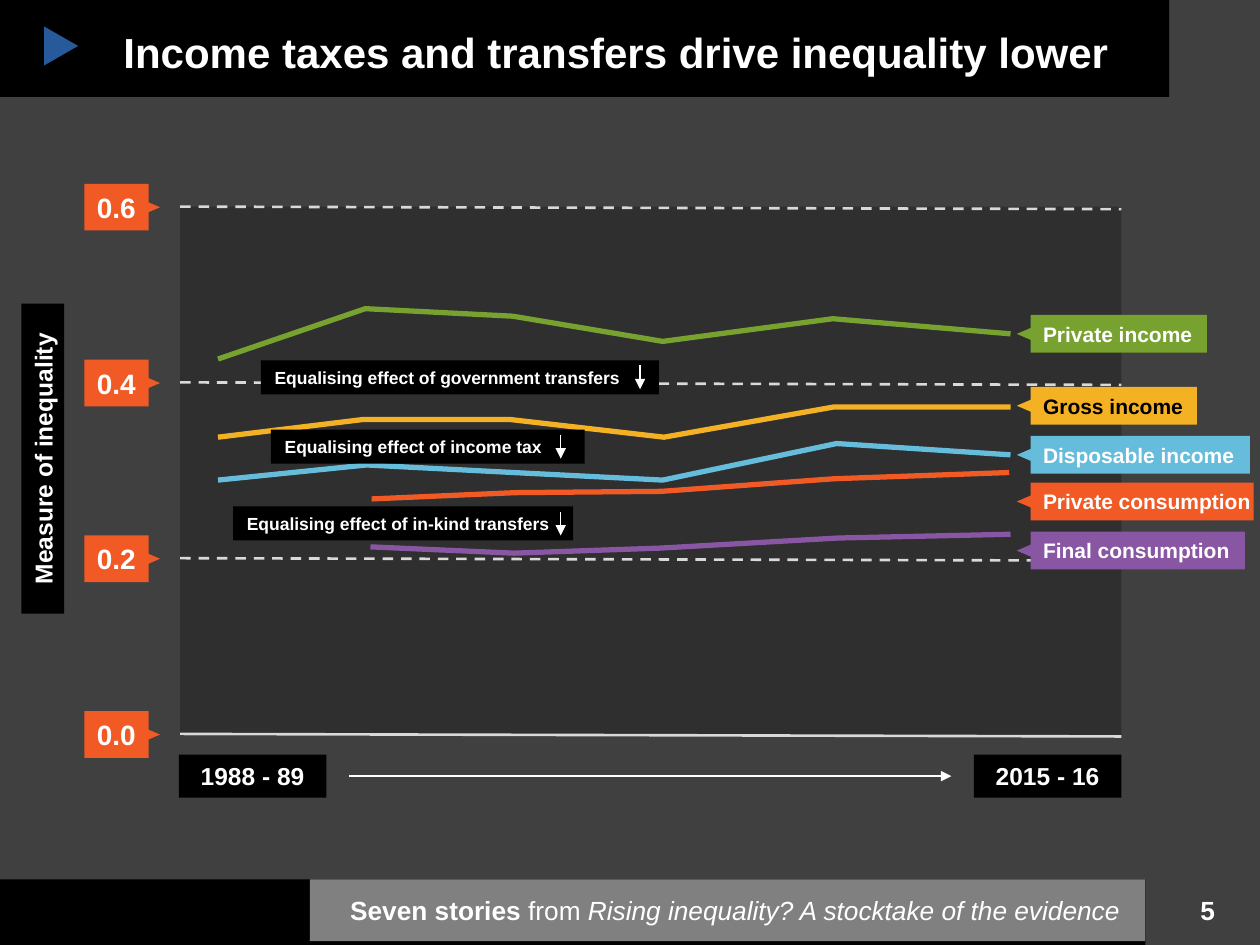
from dataclasses import dataclass

from lxml.etree import SubElement
from pptx import Presentation
from pptx.dml.color import RGBColor
from pptx.enum.dml import MSO_LINE_DASH_STYLE as Dash
from pptx.enum.shapes import MSO_CONNECTOR as Conn, MSO_SHAPE as Shape
from pptx.enum.text import MSO_ANCHOR as Anchor, PP_ALIGN as Align
from pptx.oxml.ns import qn
from pptx.util import Inches, Pt

COLORS = {
    "bg": "404040", "black": "000000", "white": "FFFFFF", "grid": "D9D9D9",
    "footer": "808080", "marker": "265A9A", "orange": "F15A25",
    "green": "78A22F", "yellow": "F4B123", "blue": "66BCDB", "purple": "8956A3",
}


@dataclass
class Box:
    x: float
    y: float
    w: float
    h: float


@dataclass
class Series:
    name: str
    color: str
    points: list[tuple[float, float]]
    tag_y: float
    tag_w: float
    text_color: str = "white"


@dataclass
class Note:
    text: str
    box: Box
    arrow_x: float


SERIES = [
    Series("Private income", "green",
           [(1.73, 2.85), (2.9, 2.45), (4.07, 2.51), (5.26, 2.71), (6.61, 2.53), (8.02, 2.65)],
           2.5, 1.4),
    Series("Gross income", "yellow",
           [(1.73, 3.47), (2.88, 3.33), (4.05, 3.33), (5.27, 3.47), (6.62, 3.23), (8.02, 3.23)],
           3.07, 1.32, "black"),
    Series("Disposable income", "blue",
           [(1.73, 3.81), (2.91, 3.69), (4.07, 3.75), (5.26, 3.81), (6.64, 3.52), (8.02, 3.61)],
           3.46, 1.74),
    Series("Private consumption", "orange",
           [(2.95, 3.96), (4.09, 3.91), (5.25, 3.9), (6.62, 3.8), (8.01, 3.75)],
           3.83, 1.77),
    Series("Final consumption", "purple",
           [(2.94, 4.34), (4.08, 4.39), (5.24, 4.35), (6.65, 4.27), (8.02, 4.24)],
           4.22, 1.7),
]
NOTES = [
    Note("Equalising effect of government transfers", Box(2.07, 2.86, 3.16, 0.27), 5.08),
    Note("Equalising effect of income tax", Box(2.15, 3.41, 2.49, 0.27), 4.45),
    Note("Equalising effect of in-kind transfers", Box(1.85, 4.02, 2.7, 0.27), 4.45),
]
TICKS = ["0.6", "0.4", "0.2", "0.0"]
PLOT = Box(1.43, 1.64, 7.47, 4.2)
TICK_STEP = 1.395


def rgb(name: str) -> RGBColor:
    return RGBColor.from_string(COLORS[name])


def add_run(p, text: str, size: float, color: str = "white", **extra) -> None:
    r = p.add_run()
    r.text = text
    for key, value in {"name": "Arial", "size": Pt(size), "bold": True, **extra}.items():
        setattr(r.font, key, value)
    r.font.color.rgb = rgb(color)


def format_text(sp, align=Align.CENTER, left: float = 0.1, right: float = 0.1):
    tf = sp.text_frame
    settings = {
        "word_wrap": True, "vertical_anchor": Anchor.MIDDLE,
        "margin_left": Inches(left), "margin_right": Inches(right),
        "margin_top": 0, "margin_bottom": 0,
    }
    for key, value in settings.items():
        setattr(tf, key, value)
    p = tf.paragraphs[0]
    p.alignment = align
    return p


def add_shape(shapes, box: Box, color: str, kind=Shape.RECTANGLE, rotation: float = 0):
    sp = shapes.add_shape(kind, *map(Inches, (box.x, box.y, box.w, box.h)))
    sp.shadow.inherit = False
    sp.fill.solid()
    sp.fill.fore_color.rgb = rgb(color)
    sp.line.fill.background()
    sp.rotation = rotation
    return sp


def add_tag(shapes, text: str, box: Box, color: str, size: float,
            text_color: str = "white", points_right: bool = False) -> None:
    group = shapes.add_group_shape().shapes
    sp = add_shape(group, box, color)
    add_run(format_text(sp, Align.LEFT, right=0), text, size, text_color)
    center_x = box.x + box.w + 0.02 if points_right else box.x - 0.04
    pointer = Box(center_x - 0.06, box.y + box.h / 2 - 0.07, 0.12, 0.14)
    add_shape(group, pointer, color, Shape.ISOSCELES_TRIANGLE, 90 if points_right else 270)


def add_line(shapes, x1: float, y1: float, x2: float, y2: float,
             color: str = "white", width: float = 0.75, dash=None, arrow: bool = False) -> None:
    line = shapes.add_connector(Conn.STRAIGHT, *map(Inches, (x1, y1, x2, y2)))
    line.line.color.rgb = rgb(color)
    line.line.width = Pt(width)
    if dash:
        line.line.dash_style = dash
    if arrow:
        SubElement(line.line._get_or_add_ln(), qn("a:tailEnd"), type="triangle")
    SubElement(line._element.spPr, qn("a:effectLst"))


def add_series_line(shapes, series: Series) -> None:
    start, *rest = [(Inches(x), Inches(y)) for x, y in series.points]
    builder = shapes.build_freeform(*start)
    builder.add_line_segments(rest, close=False)
    sp = builder.convert_to_shape()
    sp.shadow.inherit = False
    sp.fill.background()
    sp.line.color.rgb = rgb(series.color)
    sp.line.width = Pt(3)


def add_label(shapes, text: str, box: Box, rotation: float = 0) -> None:
    sp = add_shape(shapes, box, "black", rotation=rotation)
    add_run(format_text(sp), text, 14)


def add_title(shapes) -> None:
    title = shapes.title
    for key, value in {"left": 0, "top": 0, "width": 9.28, "height": 0.77}.items():
        setattr(title, key, Inches(value))
    title.fill.solid()
    title.fill.fore_color.rgb = rgb("black")
    p = format_text(title, Align.LEFT, left=0.98, right=0.2)
    p.line_spacing = Pt(32)
    add_run(p, "Income taxes and transfers drive inequality lower", 24)
    add_shape(shapes, Box(0.33, 0.23, 0.31, 0.27), "marker", Shape.ISOSCELES_TRIANGLE, 90)


def add_footer(shapes) -> None:
    add_shape(shapes, Box(0, 6.98, 9.09, 0.52), "black")
    p = format_text(add_shape(shapes, Box(2.46, 6.98, 6.63, 0.49), "footer"), Align.RIGHT, right=0.2)
    add_run(p, "Seven stories ", 15)
    add_run(p, "from ", 15, bold=False)
    add_run(p, "Rising inequality? A stocktake of the evidence", 15, bold=False, italic=True)
    number = shapes.add_textbox(*map(Inches, (9.17, 6.95, 0.83, 0.55)))
    add_run(format_text(number), "5", 15)


def add_plot(shapes) -> None:
    panel = add_shape(shapes, PLOT, "black")
    SubElement(panel._element.spPr.find(".//" + qn("a:srgbClr")), qn("a:alpha"), val="25000")
    for i, tick in enumerate(TICKS):
        y = PLOT.y + i * TICK_STEP
        dash = None if tick == "0.0" else Dash.DASH
        add_line(shapes, PLOT.x, y, PLOT.x + PLOT.w, y + 0.02, "grid", 1.5, dash)
        add_tag(shapes, tick, Box(0.67, y - 0.18, 0.51, 0.37), "orange", 16, points_right=True)
    for series in SERIES:
        add_series_line(shapes, series)
    for note in NOTES:
        sp = add_shape(shapes, note.box, "black")
        add_run(format_text(sp, Align.LEFT, left=0.11, right=0), note.text, 10)
        top = note.box.y + 0.04
        add_line(shapes, note.arrow_x, top, note.arrow_x, top + 0.19, arrow=True)
    for series in SERIES:
        box = Box(8.18, series.tag_y, series.tag_w, 0.3)
        add_tag(shapes, series.name, box, series.color, 12, series.text_color)
    add_label(shapes, "1988 - 89", Box(1.42, 5.99, 1.17, 0.34))
    add_label(shapes, "2015 - 16", Box(7.73, 5.99, 1.17, 0.34))
    add_line(shapes, 2.77, 6.16, 7.55, 6.16, arrow=True)
    add_label(shapes, "Measure of inequality", Box(-0.89, 3.47, 2.46, 0.34), 270)


def main() -> None:
    prs = Presentation()
    prs.slide_width, prs.slide_height = Inches(10), Inches(7.5)
    s = prs.slides.add_slide(prs.slide_layouts[5])
    s.background.fill.solid()
    s.background.fill.fore_color.rgb = rgb("bg")
    add_title(s.shapes)
    add_plot(s.shapes)
    add_footer(s.shapes)
    prs.save("out.pptx")


if __name__ == "__main__":
    main()
